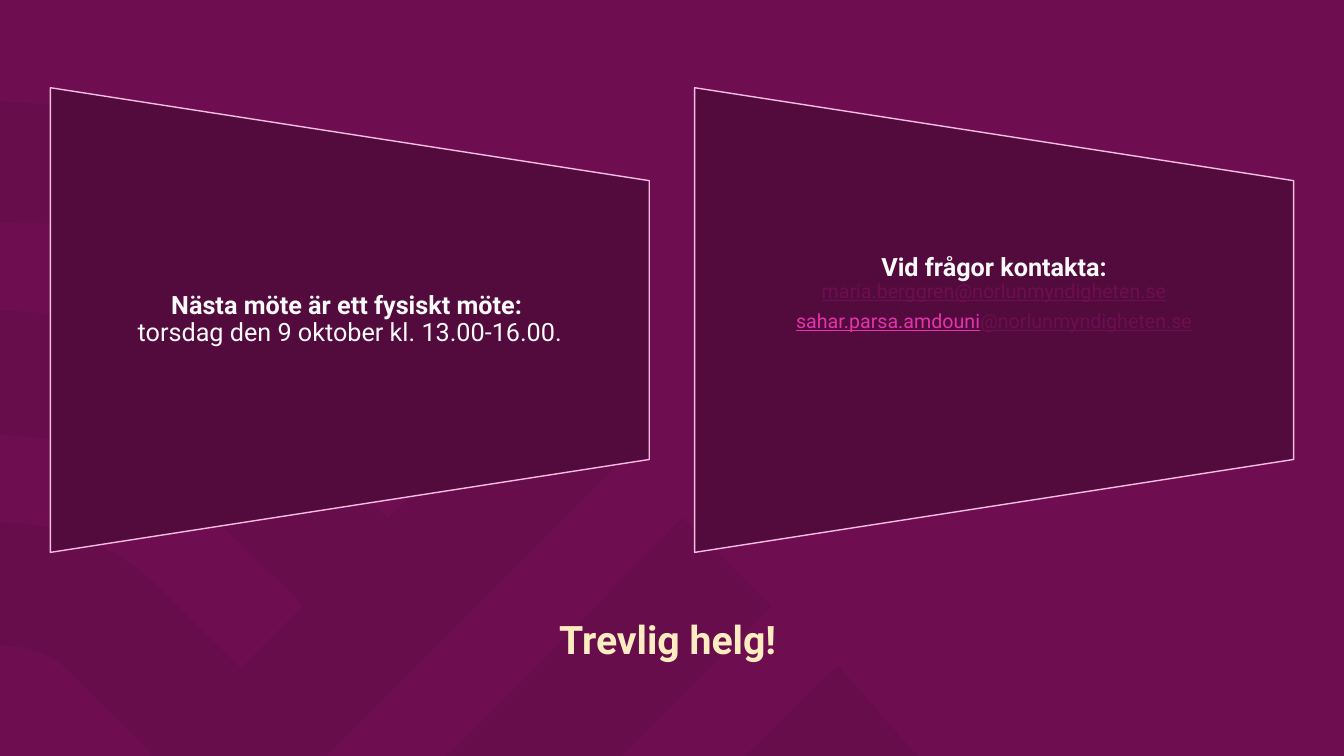
from lxml import etree
from pptx import Presentation
from pptx.dml.color import RGBColor
from pptx.enum.shapes import MSO_SHAPE as Shape
from pptx.enum.text import MSO_ANCHOR as Anchor, PP_ALIGN as Align
from pptx.oxml.ns import qn
from pptx.util import Inches, Pt

FONT = "Roboto"
COLORS = {
    "plum": "6E0E50",
    "pattern": "370728",
    "panel": "520B3C",
    "outline": "F6BBE4",
    "white": "FAFAFA",
    "pink": "E532AD",
    "cream": "FFECC1",
}
DOMAIN = "@norlunmyndigheten.se"
PANEL_LEFTS = (0.5, 6.89)
PANEL_TOP, PANEL_WIDTH, PANEL_HEIGHT = 0.87, 5.94, 4.61
TEXT_TOP, TEXT_HEIGHT = 1.79, 2.77

# Background contours: a pair is a corner, a triple of pairs is a Bézier curve
PATTERN = [
    [(8.31, 6.6), (9.1, 7.5), (7.39, 7.5)],
    [(6.77, 5.14), (7.65, 6.01), (6.16, 7.5), (4.43, 7.5)],
    [
        (0, 1.01), (0.58, 1.04), ((2.03, 1.18), (3.44, 1.8), (4.54, 2.91)),
        (6.19, 4.55), (3.24, 7.5), (1.48, 7.5), (1.51, 7.47), (0.74, 6.71),
        ((0.59, 6.55), (0.4, 6.45), (0.2, 6.42)), (0, 6.4), (0, 5.18),
        (0.02, 5.18), ((0.6, 5.19), (1.18, 5.42), (1.62, 5.87)),
        (2.39, 6.63), (3.01, 6.01), (2.24, 5.25),
        ((1.75, 4.76), (1.18, 4.48), (0.59, 4.37)), (0, 4.31), (0, 3.08),
        (0.4, 3.1), ((1.38, 3.2), (2.33, 3.62), (3.08, 4.37)),
        (3.85, 5.14), (4.47, 4.51), (3.7, 3.75),
        ((2.84, 2.87), (1.71, 2.34), (0.53, 2.22)), (0, 2.21),
    ],
]


def color(name):
    return RGBColor.from_string(COLORS[name])


def flatten(contour, steps=16):
    """Turn corners and curves into a list of points in EMU."""
    points = []
    for part in contour:
        if len(part) == 2:
            points.append(part)
            continue
        controls = (points[-1], *part)
        for step in range(1, steps + 1):
            t = step / steps
            weights = ((1 - t) ** 3, 3 * t * (1 - t) ** 2, 3 * t * t * (1 - t), t ** 3)
            points.append(tuple(
                sum(w * p[axis] for w, p in zip(weights, controls)) for axis in (0, 1)
            ))
    return [(Inches(x), Inches(y)) for x, y in points]


def add_pattern(page):
    outlines = [flatten(contour) for contour in PATTERN]
    builder = page.shapes.build_freeform(*outlines[0][0])
    for outline in outlines:
        builder.move_to(*outline[0])
        builder.add_line_segments(outline[1:], close=True)
    pattern = builder.convert_to_shape()
    pattern.shadow.inherit = False
    pattern.line.fill.background()
    pattern.fill.solid()
    pattern.fill.fore_color.rgb = color("pattern")
    tint = pattern.fill._xPr.find(".//" + qn("a:srgbClr"))
    etree.SubElement(tint, qn("a:alpha"), val="10000")


def add_panel(page, left):
    # Drawn upright and turned, so width and height swap around the centre
    shift = (PANEL_WIDTH - PANEL_HEIGHT) / 2
    panel = page.shapes.add_shape(
        Shape.FLOWCHART_MANUAL_OPERATION,
        Inches(left + shift), Inches(PANEL_TOP - shift),
        Inches(PANEL_HEIGHT), Inches(PANEL_WIDTH),
    )
    panel.rotation = 270
    panel.shadow.inherit = False
    panel.fill.solid()
    panel.fill.fore_color.rgb = color("panel")
    panel.line.color.rgb = color("outline")
    panel.line.width = Pt(1)


def add_text_box(page, left, top, width, height, anchor=Anchor.TOP):
    box = page.shapes.add_textbox(Inches(left), Inches(top), Inches(width), Inches(height))
    frame = box.text_frame
    frame.word_wrap = True
    frame.vertical_anchor = anchor
    return frame


def add_panel_text(page, left, lift=0):
    frame = add_text_box(page, left, TEXT_TOP, PANEL_WIDTH, TEXT_HEIGHT, Anchor.MIDDLE)
    frame.margin_left = frame.margin_right = Inches(0.12)
    frame.margin_top, frame.margin_bottom = 0, Inches(lift)
    return frame


def style_paragraph(para, size, line_spacing=None):
    para.alignment = Align.CENTER
    para.line_spacing = line_spacing
    para.font.name = FONT
    para.font.size = Pt(size)


def add_span(para, text, color_name, size=None, bold=False, underline=False):
    span = para.add_run()
    span.text = text
    font = span.font
    font.name = FONT
    font.color.rgb = color(color_name)
    font.bold = bold
    font.underline = underline
    if size:
        font.size = Pt(size)


def main():
    deck = Presentation()
    deck.slide_width, deck.slide_height = Inches(13.33), Inches(7.5)
    page = deck.slides.add_slide(deck.slide_layouts[6])

    # Background
    page.background.fill.solid()
    page.background.fill.fore_color.rgb = color("plum")
    add_pattern(page)

    # Panels
    for left in PANEL_LEFTS:
        add_panel(page, left)
    meeting_left, contact_left = PANEL_LEFTS

    # Next meeting
    meeting = add_panel_text(page, meeting_left).paragraphs[0]
    style_paragraph(meeting, 18, 0.9)
    add_span(meeting, "Nästa möte är ett fysiskt möte: ", "white", bold=True)
    meeting.add_line_break()
    add_span(meeting, "torsdag den 9 oktober kl. 13.00-16.00.", "white")

    # Contacts
    contacts = add_panel_text(page, contact_left, lift=0.52)
    first = contacts.paragraphs[0]
    style_paragraph(first, 14, 0.9)
    first.space_after = Pt(6.6)
    add_span(first, "Vid frågor kontakta:", "white", size=18, bold=True)
    first.add_line_break()
    add_span(first, "maria.berggren" + DOMAIN, "plum", size=14, underline=True)
    second = contacts.add_paragraph()
    style_paragraph(second, 14, 0.9)
    add_span(second, "sahar.parsa.amdouni", "pink", size=14, underline=True)
    add_span(second, DOMAIN, "plum", size=14, underline=True)

    # Closing greeting
    greeting = add_text_box(page, 4.12, 6.06, 5.1, 1.04).paragraphs[0]
    style_paragraph(greeting, 28)
    add_span(greeting, "Trevlig helg! ", "cream", bold=True)

    deck.save("out.pptx")


if __name__ == "__main__":
    main()
